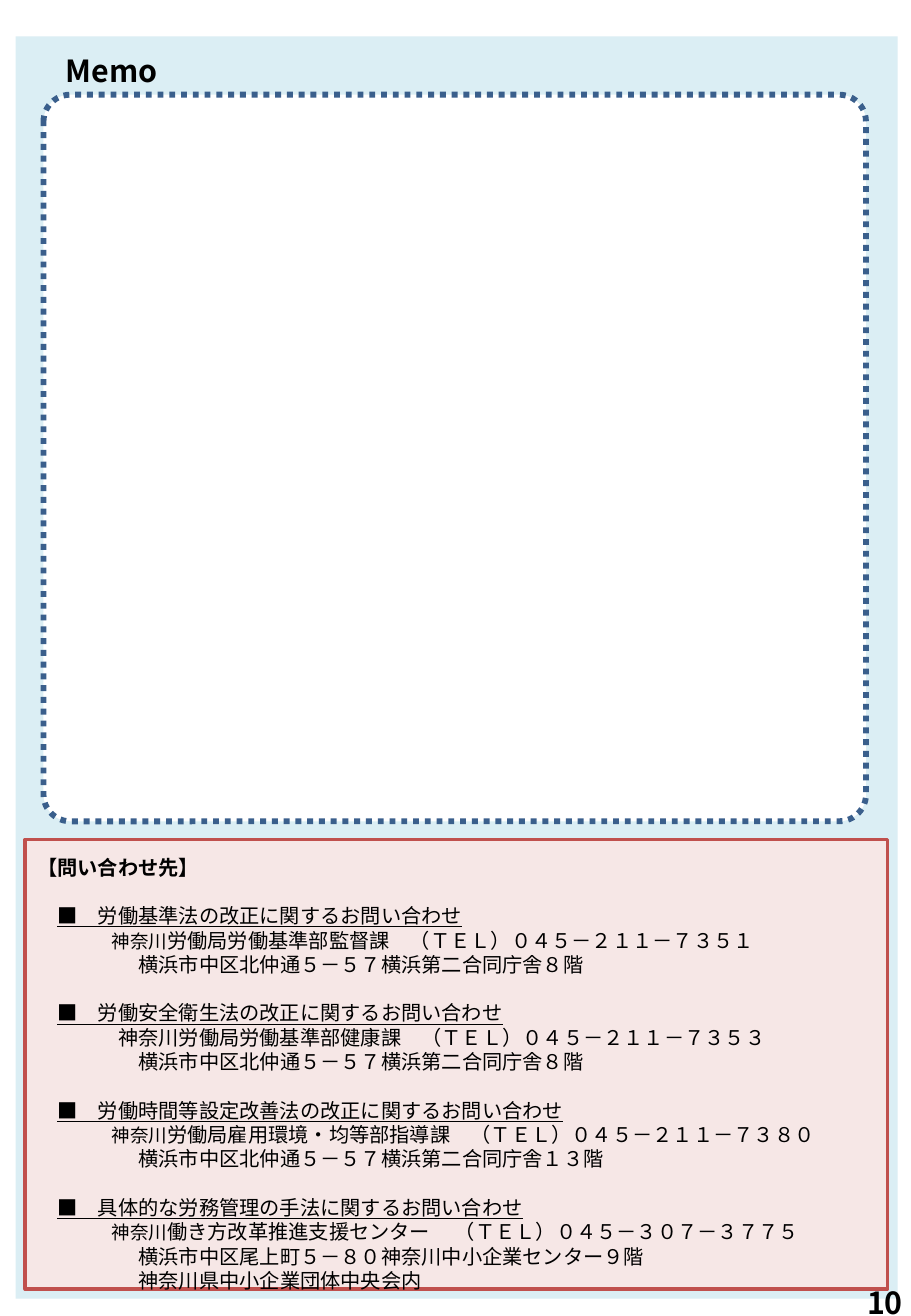
from pptx import Presentation
from pptx.dml.color import RGBColor
from pptx.enum.dml import MSO_LINE
from pptx.enum.shapes import MSO_SHAPE
from pptx.enum.text import MSO_ANCHOR, PP_ALIGN
from pptx.oxml.ns import qn
from pptx.util import Cm, Pt

RECTANGLE, ROUNDED = MSO_SHAPE.RECTANGLE, MSO_SHAPE.ROUNDED_RECTANGLE
TOP, MIDDLE = MSO_ANCHOR.TOP, MSO_ANCHOR.MIDDLE
LEFT, CENTER, RIGHT = PP_ALIGN.LEFT, PP_ALIGN.CENTER, PP_ALIGN.RIGHT
DOTTED = MSO_LINE.ROUND_DOT

FONT = "Noto Sans CJK JP"
BLACK = RGBColor(0x00, 0x00, 0x00)
WHITE = RGBColor(0xFF, 0xFF, 0xFF)
PALE_BLUE = RGBColor(0xDB, 0xEE, 0xF4)
PALE_RED = RGBColor(0xF6, 0xE7, 0xE6)
RED = RGBColor(0xC0, 0x50, 0x4D)
NAVY = RGBColor(0x3A, 0x5F, 0x8C)


def add_panel(kind, place, fill, line_color=None, line_width=0):
    panel = page.shapes.add_shape(kind, *[Cm(length) for length in place])
    panel.shadow.inherit = False
    panel.fill.solid()
    panel.fill.fore_color.rgb = fill
    if line_color is None:
        panel.line.fill.background()
    else:
        panel.line.color.rgb = line_color
        panel.line.width = Pt(line_width)
    return panel


def add_span(para, text, **formats):
    span = para.add_run()
    span.text = text
    for name, value in {"name": FONT, "size": Pt(12), **formats}.items():
        setattr(span.font, name, value)
    span.font.color.rgb = BLACK
    east_asian = span.font._element.makeelement(qn("a:ea"), {"typeface": FONT})
    span.font._element.find(qn("a:latin")).addnext(east_asian)


deck = Presentation()
deck.slide_width, deck.slide_height = Cm(19.05), Cm(27.51)
page = deck.slides.add_slide(deck.slide_layouts[6])

# Background and contact panel
add_panel(RECTANGLE, (0.33, 0.76, 18.44, 26.39), PALE_BLUE)
contact_panel = add_panel(RECTANGLE, (0.53, 17.55, 18.03, 9.4), PALE_RED, RED, 2.25)

# Memo area
memo_area = add_panel(ROUNDED, (0.91, 1.98, 17.2, 15.19), WHITE, NAVY, 3.5)
memo_area.adjustments[0] = 0.037
memo_area.line.dash_style = DOTTED

# Contacts: heading, size of the prefecture name, office, address lines
PREFECTURE = "神奈川"
contacts = [
    ("労働基準法の改正に関するお問い合わせ", 11,
     "労働局労働基準部監督課　（ＴＥＬ）０４５－２１１－７３５１",
     ["横浜市中区北仲通５－５７横浜第二合同庁舎８階"]),
    ("労働安全衛生法の改正に関するお問い合わせ", 12,
     "労働局労働基準部健康課　（ＴＥＬ）０４５－２１１－７３５３",
     ["横浜市中区北仲通５－５７横浜第二合同庁舎８階"]),
    ("労働時間等設定改善法の改正に関するお問い合わせ", 11,
     "労働局雇用環境・均等部指導課　（ＴＥＬ）０４５－２１１－７３８０",
     ["横浜市中区北仲通５－５７横浜第二合同庁舎１３階"]),
    ("具体的な労務管理の手法に関するお問い合わせ", 11,
     "働き方改革推進支援センター　 （ＴＥＬ）０４５－３０７－３７７５",
     ["横浜市中区尾上町５－８０神奈川中小企業センター９階",
      "神奈川県中小企業団体中央会内"]),
]
LINE_PITCH = Pt(14.4)

frame = contact_panel.text_frame
frame.word_wrap = True
frame.vertical_anchor = TOP
frame.margin_bottom = 0
title = frame.paragraphs[0]
title.alignment = LEFT
title.line_spacing = Pt(20)
add_span(title, "【問い合わせ先】", bold=True)

for heading, prefecture_size, office, address in contacts:
    # Indents are counted in full-width characters, given in points
    rows = [
        (12, [("■　" + heading, {"underline": True})]),
        (4 * prefecture_size, [(PREFECTURE, {"size": Pt(prefecture_size)}), (office, {})]),
    ]
    rows += [(60, [(line, {})]) for line in address]
    for number, (indent, spans) in enumerate(rows):
        para = frame.add_paragraph()
        para.alignment = LEFT
        para.line_spacing = LINE_PITCH
        para.space_before = LINE_PITCH if number == 0 else 0
        para._p.get_or_add_pPr().set("marL", str(Pt(indent)))
        for text, formats in spans:
            add_span(para, text, **formats)

# Memo title and page number
labels = [
    ("Memo", (0.53, 0.97, 3.61, 1.02), CENTER, TOP),
    ("10", (14.68, 26.49, 4.45, 1.47), RIGHT, MIDDLE),
]
for text, place, alignment, anchor in labels:
    box = page.shapes.add_textbox(*[Cm(length) for length in place])
    box.text_frame.word_wrap = True
    box.text_frame.vertical_anchor = anchor
    para = box.text_frame.paragraphs[0]
    para.alignment = alignment
    add_span(para, text, size=Pt(18), bold=True)

deck.save("out.pptx")
